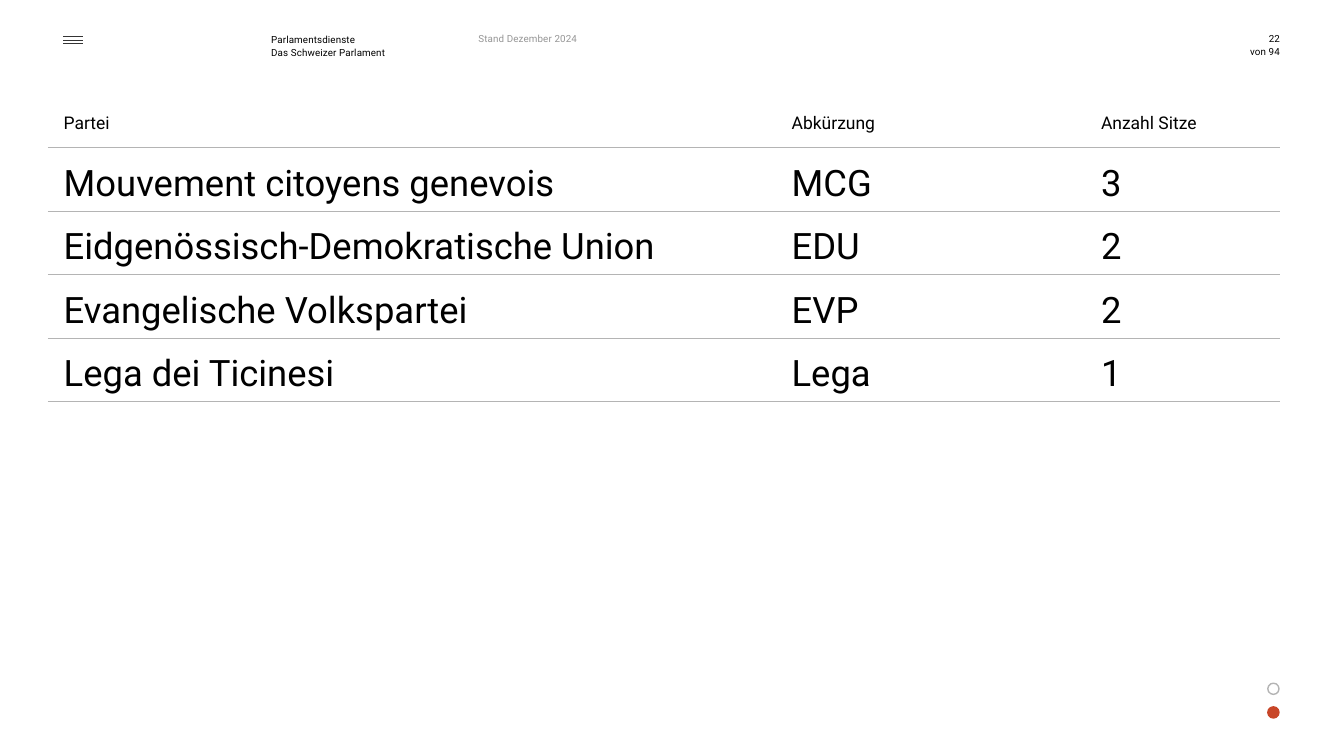
from dataclasses import dataclass

from lxml.etree import SubElement
from pptx import Presentation
from pptx.dml.color import RGBColor
from pptx.enum.shapes import MSO_CONNECTOR, MSO_SHAPE
from pptx.enum.text import PP_ALIGN
from pptx.oxml import parse_xml
from pptx.oxml.ns import nsdecls, qn
from pptx.slide import Slide
from pptx.util import Pt


@dataclass(frozen=True)
class Theme:
    font: str = "Roboto"
    black: str = "000000"
    muted: str = "969696"
    menu: str = "343434"
    rule: str = "B4B4B4"
    accent: str = "C84628"
    small: float = 7
    head: float = 12.5
    body: float = 26


@dataclass(frozen=True)
class Label:
    lines: tuple[str, ...]
    x: float
    y: float
    w: float
    h: float
    color: str
    align: PP_ALIGN = PP_ALIGN.LEFT
    spacing: float = 1.0


@dataclass(frozen=True)
class RowStyle:
    size: float
    height: float
    margins: dict[str, float]
    spacing: float


T = Theme()

# Content
LABELS = [
    Label(("Parlamentsdienste", "Das Schweizer Parlament"),
          193.7, 23.2, 93.6, 18.7, T.black, spacing=1.1),
    Label(("Stand Dezember 2024",), 341.7, 23.2, 87.1, 8.6, T.muted),
    Label(("22",), 882.5, 23.2, 31.7, 8.6, T.black, PP_ALIGN.RIGHT),
    Label(("von 94",), 882.5, 32.4, 31.7, 8.6, T.black, PP_ALIGN.RIGHT),
]
PARTIES = [
    ("Partei", "Abkürzung", "Anzahl Sitze"),
    ("Mouvement citoyens genevois", "MCG", "3"),
    ("Eidgenössisch-Demokratische Union", "EDU", "2"),
    ("Evangelische Volkspartei", "EVP", "2"),
    ("Lega dei Ticinesi", "Lega", "1"),
]
COLUMNS = (520, 221, 139)
HEAD_ROW = RowStyle(T.head, 28.1, {"margin_left": 11.3, "margin_top": 3.6,
                                   "margin_right": 7.2, "margin_bottom": 3.6}, 1.0)
BODY_ROW = RowStyle(T.body, 45.35, {"margin_left": 11.3, "margin_top": 8.5,
                                    "margin_right": 5.7, "margin_bottom": 0}, 1.07)


def add_run(p, text: str, size: float, color: str):
    r = p.add_run()
    r.text = text
    for name, value in {"name": T.font, "size": Pt(size)}.items():
        setattr(r.font, name, value)
    r.font.color.rgb = RGBColor.from_string(color)
    return r


def add_label(s: Slide, label: Label) -> None:
    box = s.shapes.add_textbox(Pt(label.x), Pt(label.y), Pt(label.w), Pt(label.h))
    tf = box.text_frame
    tf.word_wrap = True
    for side in ("left", "top", "right", "bottom"):
        setattr(tf, f"margin_{side}", 0)
    for i, line in enumerate(label.lines):
        p = tf.add_paragraph() if i else tf.paragraphs[0]
        p.alignment, p.line_spacing = label.align, label.spacing
        r = add_run(p, line, T.small, label.color)
        r.font._element.set("spc", "10")


def add_menu_line(s: Slide, y: float) -> None:
    line = s.shapes.add_connector(MSO_CONNECTOR.STRAIGHT, Pt(45.2), Pt(y), Pt(59.6), Pt(y))
    line.line.color.rgb = RGBColor.from_string(T.menu)
    line.line.width = Pt(0.4)
    SubElement(line._element.spPr, qn("a:effectLst"))


def add_dot(s: Slide, y: float, color: str, filled: bool) -> None:
    dot = s.shapes.add_shape(MSO_SHAPE.OVAL, Pt(905.6), Pt(y), Pt(8), Pt(8))
    dot.shadow.inherit = False
    dot.line.color.rgb = RGBColor.from_string(color)
    dot.line.width = Pt(1)
    if filled:
        dot.fill.solid()
        dot.fill.fore_color.rgb = RGBColor.from_string(color)
    else:
        dot.fill.background()


def add_bottom_rule(cell) -> None:
    rule = parse_xml(
        f'<a:lnB {nsdecls("a")} w="{Pt(0.5)}"><a:solidFill>'
        f'<a:srgbClr val="{T.rule}"/></a:solidFill></a:lnB>')
    cell._tc.get_or_add_tcPr().insert(0, rule)


def add_party_table(s: Slide) -> None:
    height = HEAD_ROW.height + BODY_ROW.height * (len(PARTIES) - 1)
    table = s.shapes.add_table(len(PARTIES), len(COLUMNS), Pt(34.2), Pt(77.3),
                               Pt(sum(COLUMNS)), Pt(height)).table
    table.first_row = table.horz_banding = False
    # Plain style without a grid
    style_id = table._tbl.tblPr.find(qn("a:tableStyleId"))
    style_id.text = "{2D5ABB26-0587-4C30-8999-92F81FD0307C}"
    for column, width in zip(table.columns, COLUMNS):
        column.width = Pt(width)
    for i, (row, texts) in enumerate(zip(table.rows, PARTIES)):
        style = BODY_ROW if i else HEAD_ROW
        row.height = Pt(style.height)
        for cell, text in zip(row.cells, texts):
            for name, value in style.margins.items():
                setattr(cell, name, Pt(value))
            cell.fill.background()
            add_bottom_rule(cell)
            p = cell.text_frame.paragraphs[0]
            p.line_spacing = style.spacing
            add_run(p, text, style.size, T.black)


def main() -> None:
    prs = Presentation()
    prs.slide_width, prs.slide_height = Pt(960), Pt(540)
    s = prs.slides.add_slide(prs.slide_layouts[6])

    # Header
    for label in LABELS:
        add_label(s, label)
    for i in range(3):
        add_menu_line(s, 26 + 2.5 * i)

    # Table of parties
    add_party_table(s)

    # Page dots
    add_dot(s, 488, T.rule, filled=False)
    add_dot(s, 504.9, T.accent, filled=True)

    prs.save("out.pptx")


if __name__ == "__main__":
    main()
